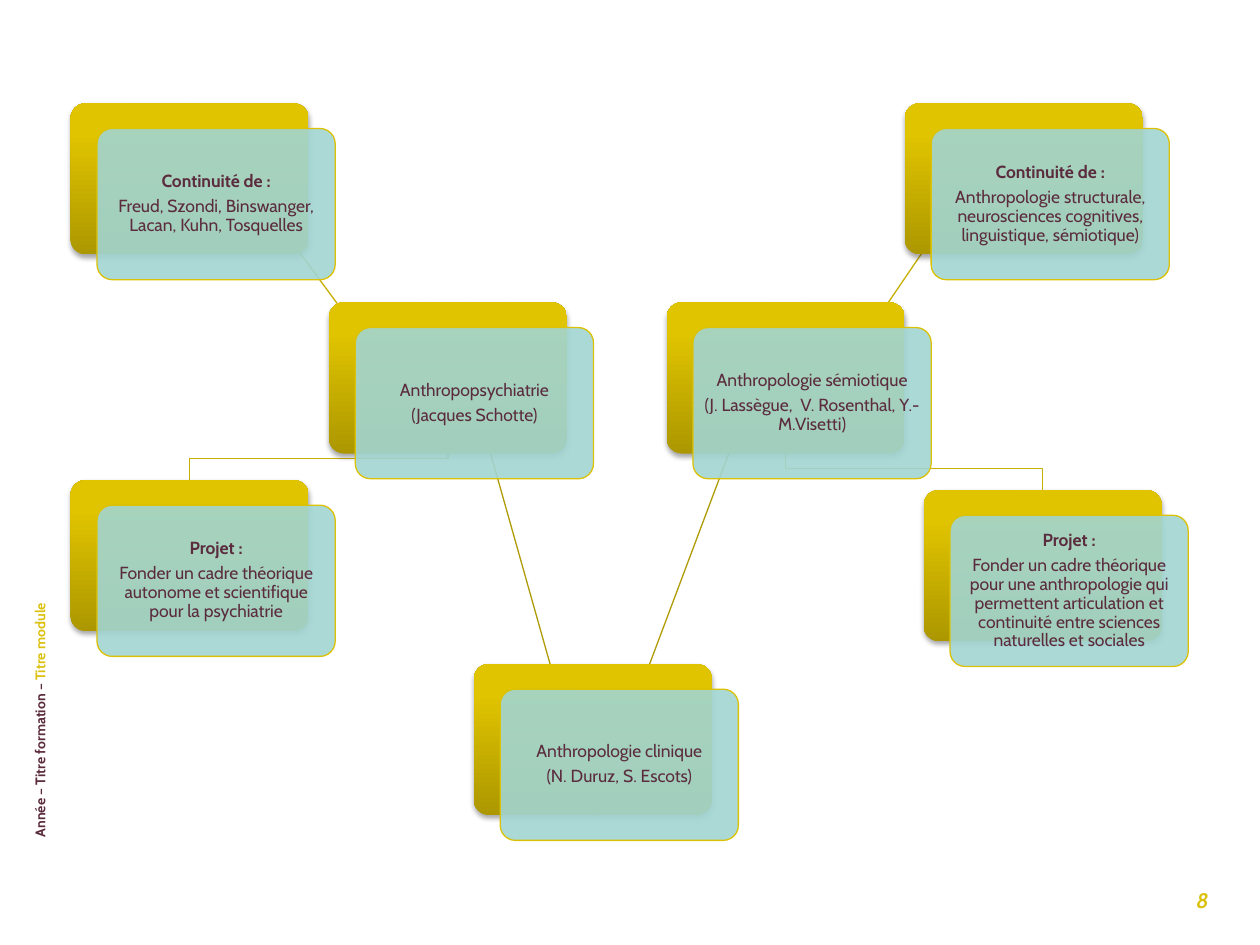
"""Build the slide of linked anthropology cards."""
from lxml import etree
from pptx import Presentation
from pptx.dml.color import RGBColor
from pptx.enum.shapes import MSO_CONNECTOR, MSO_SHAPE
from pptx.enum.text import MSO_ANCHOR, PP_ALIGN
from pptx.oxml import parse_xml
from pptx.oxml.ns import nsdecls, qn
from pptx.util import Inches, Pt

PLUM = RGBColor(0x5B, 0x2C, 0x3E)
YELLOW = RGBColor(0xDB, 0xC1, 0x0C)
BORDER = RGBColor(0xDB, 0xC1, 0x07)
AQUA = RGBColor(0xA1, 0xD5, 0xD2)
OLIVE = RGBColor(0xC7, 0xAF, 0x06)
DARK_OLIVE = RGBColor(0xAF, 0x9B, 0x06)
GOLD_STOPS = ((0, "AC9700"), (80, "E0C400"), (100, "E1C500"))

WIDTH, HEIGHT = 1.89, 1.2
SHIFT_X, SHIFT_Y = 0.21, 0.2
TOP, BOTTOM = 0, 2

CARDS = {
    "clinique": (3.76, 5.27, ("Anthropologie clinique", "(N. Duruz, S. Escots)")),
    "psychiatrie": (2.61, 2.4, ("Anthropopsychiatrie", "(Jacques Schotte)")),
    "continuité gauche": (0.56, 0.82, (
        "Continuité de :", "Freud, Szondi, Binswanger, Lacan, Kuhn, Tosquelles")),
    "projet gauche": (0.56, 3.81, (
        "Projet :", "Fonder un cadre théorique autonome et scientifique pour la psychiatrie")),
    "sémiotique": (5.29, 2.4, (
        "Anthropologie sémiotique", "(J. Lassègue,  V. Rosenthal, Y.-M.Visetti)")),
    "continuité droite": (7.18, 0.82, (
        "Continuité de :",
        "Anthropologie structurale, neurosciences cognitives, linguistique, sémiotique)")),
    "projet droite": (7.33, 3.89, (
        "Projet :",
        "Fonder un cadre théorique pour une anthropologie qui permettent articulation "
        "et continuité entre sciences naturelles et sociales")),
}
LINKS = (
    ("clinique", "psychiatrie", DARK_OLIVE),
    ("psychiatrie", "continuité gauche", OLIVE),
    ("clinique", "sémiotique", DARK_OLIVE),
    ("sémiotique", "continuité droite", OLIVE),
)
BRANCHES = (("psychiatrie", "projet gauche", 3.64), ("sémiotique", "projet droite", 3.72))


def apply(target, values):
    """Set each named attribute on the target."""
    for name, value in values.items():
        setattr(target, name, value)


class Diagram:
    """Hold the style and the current slide."""

    font = {"name": "Cabin", "size": Pt(10), "bold": False}
    card_para = {"alignment": PP_ALIGN.CENTER, "line_spacing": 0.9, "space_after": Pt(3.5)}
    card_frame = {"word_wrap": True, "vertical_anchor": MSO_ANCHOR.MIDDLE} | {
        f"margin_{side}": Inches(0.04) for side in ("left", "right", "top", "bottom")}

    def __init__(self, page):
        """Keep the slide to draw on."""
        self.page = page
        self.backs = {}

    def add_span(self, para, text, color, **extra):
        """Add a styled span to a paragraph."""
        span = para.add_run()
        span.text = text
        apply(span.font, self.font | extra)
        span.font.color.rgb = color

    def rounded(self, left, top):
        """Add one rounded rectangle of the common size."""
        box = self.page.shapes.add_shape(
            MSO_SHAPE.ROUNDED_RECTANGLE,
            Inches(left), Inches(top), Inches(WIDTH), Inches(HEIGHT))
        box.adjustments[0] = 0.1
        box.shadow.inherit = False
        return box

    def back(self, left, top):
        """Add the golden rear plate with its soft shadow."""
        box = self.rounded(left, top)
        box.line.fill.background()
        box.fill.gradient()
        properties = box.element.spPr
        stops = "".join(
            f'<a:gs pos="{place * 1000}"><a:srgbClr val="{color}"/></a:gs>'
            for place, color in GOLD_STOPS)
        properties.replace(properties.find(qn("a:gradFill")), parse_xml(
            f'<a:gradFill {nsdecls("a")} rotWithShape="1"><a:gsLst>{stops}</a:gsLst>'
            '<a:lin ang="16200000" scaled="0"/></a:gradFill>'))
        properties.find(qn("a:effectLst")).append(parse_xml(
            f'<a:outerShdw {nsdecls("a")} blurRad="{Pt(3.1)}" dist="{Pt(1.8)}" '
            'dir="5400000" rotWithShape="0"><a:srgbClr val="000000">'
            '<a:alpha val="35000"/></a:srgbClr></a:outerShdw>'))
        return box

    def card(self, name, left, top, lines):
        """Add a rear plate and the text card in front of it."""
        self.backs[name] = self.back(left, top)
        box = self.rounded(left + SHIFT_X, top + SHIFT_Y)
        box.fill.solid()
        box.fill.fore_color.rgb = AQUA
        color = box.element.spPr.find(qn("a:solidFill"))[0]
        etree.SubElement(color, qn("a:alpha")).set("val", "90000")
        box.line.color.rgb = BORDER
        box.line.width = Pt(0.75)
        frame = box.text_frame
        apply(frame, self.card_frame)
        for index, text in enumerate(lines):
            para = frame.add_paragraph() if index else frame.paragraphs[0]
            apply(para, self.card_para)
            self.add_span(para, text, PLUM, bold=text.endswith(" :"))

    def finish_line(self, shape, color):
        """Style a line and send it behind the cards."""
        shape.line.color.rgb = color
        shape.line.width = Pt(0.75)
        shape.element.getparent().insert(2, shape.element)

    def link(self, lower, upper, color):
        """Join the bottom of one plate to the top of another."""
        line = self.page.shapes.add_connector(MSO_CONNECTOR.STRAIGHT, 0, 0, 0, 0)
        line.begin_connect(self.backs[lower], BOTTOM)
        line.end_connect(self.backs[upper], TOP)
        self.finish_line(line, color)
        etree.SubElement(line.element.spPr, qn("a:effectLst"))

    def branch(self, parent, child, bend):
        """Draw a stepped line from one plate down to another."""
        start, end = self.backs[parent], self.backs[child]
        start_x, end_x = (box.left + box.width // 2 for box in (start, end))
        builder = self.page.shapes.build_freeform(start_x, start.top + start.height)
        builder.add_line_segments(
            [(start_x, Inches(bend)), (end_x, Inches(bend)), (end_x, end.top)], close=False)
        line = builder.convert_to_shape()
        line.shadow.inherit = False
        line.fill.background()
        self.finish_line(line, OLIVE)

    def label(self, left, top, width, height, spans, rotation=0, **extra):
        """Add a text box of one paragraph and return the paragraph."""
        box = self.page.shapes.add_textbox(
            Inches(left), Inches(top), Inches(width), Inches(height))
        box.rotation = rotation
        apply(box.text_frame, {"word_wrap": True, "vertical_anchor": MSO_ANCHOR.MIDDLE})
        para = box.text_frame.paragraphs[0]
        for text, color in spans:
            self.add_span(para, text, color, bold=True, **extra)
        return para


def main():
    """Create and save the deck."""
    deck = Presentation()
    deck.slide_width, deck.slide_height = Inches(10), Inches(7.5)
    diagram = Diagram(deck.slides.add_slide(deck.slide_layouts[6]))
    number = diagram.label(9.21, 6.83, 0.67, 0.62, [("8", YELLOW)], size=Pt(12), italic=True)
    number.alignment = PP_ALIGN.CENTER
    diagram.label(
        -2.56, 3.75, 5.75, 0.24,
        [("Année – Titre formation – ", PLUM), ("Titre module", YELLOW)],
        rotation=270, size=Pt(8))
    for name, (left, top, lines) in CARDS.items():
        diagram.card(name, left, top, lines)
    for lower, upper, color in LINKS:
        diagram.link(lower, upper, color)
    for parent, child, bend in BRANCHES:
        diagram.branch(parent, child, bend)
    deck.save("out.pptx")


if __name__ == "__main__":
    main()
